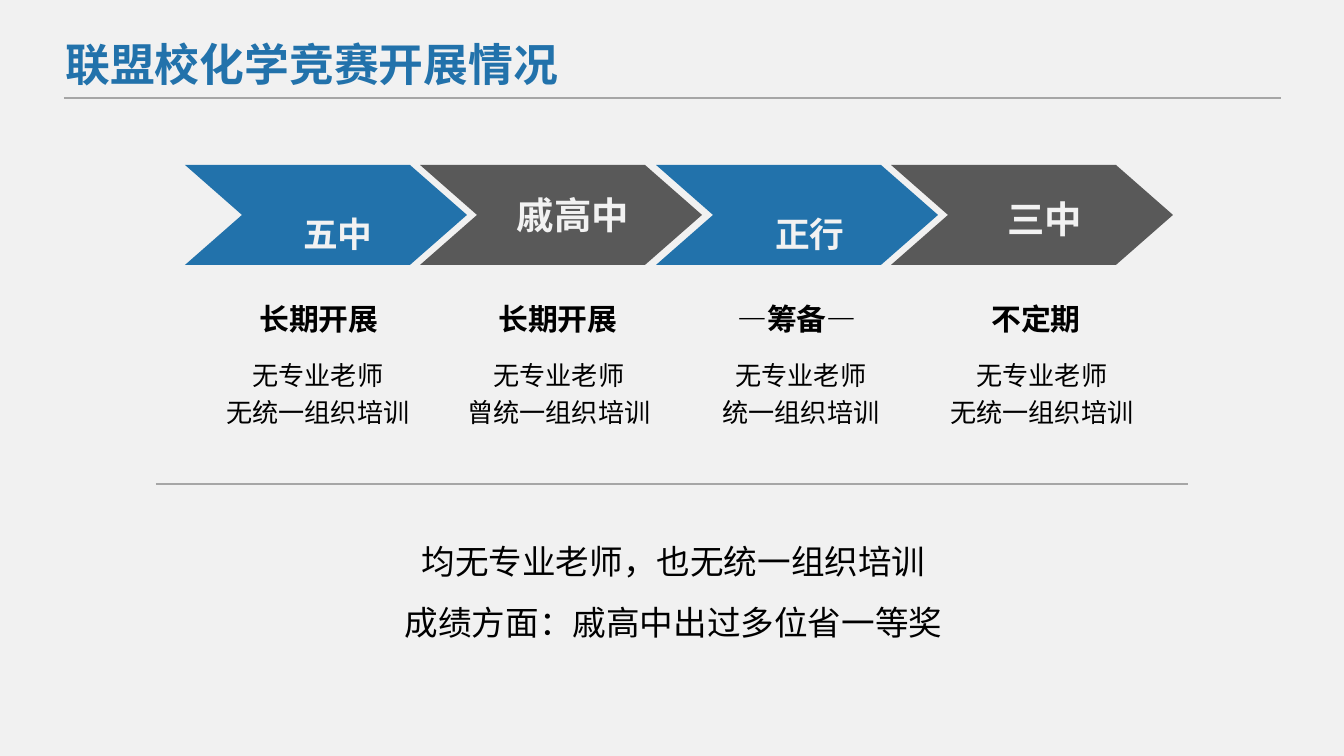
from pptx import Presentation, util as u
from pptx.dml.color import RGBColor
from pptx.enum import shapes, text
from pptx.oxml import xmlchemy as xml

PX = 914400 / 134.4
FACE = "Noto Sans CJK SC"
BLUE, GREY, RULE, PALE = "2272AB", "595959", "A6A6A6", "F2F2F2"
rgb = RGBColor.from_string


def px(*vals):
    return [u.Emu(round(v * PX)) for v in vals]


def write(box, lines, size, color="000000", bold=False, align="CENTER",
          space=None, wrap=True, inset=None, anchor="TOP", base=None):
    frame = slide.shapes.add_textbox(*px(*box)).text_frame
    frame.word_wrap = wrap
    frame.auto_size = text.MSO_AUTO_SIZE.SHAPE_TO_FIT_TEXT
    frame.vertical_anchor = text.MSO_ANCHOR[anchor]
    if inset:
        frame.margin_left, frame.margin_top = px(*inset)
        frame.margin_right, frame.margin_bottom = px(*inset)
    for i, line in enumerate(lines):
        para = frame.add_paragraph() if i else frame.paragraphs[0]
        para.alignment = text.PP_ALIGN[align]
        para.line_spacing = space
        run = para.add_run()
        run.text = line
        font = run.font
        font.name, font.size, font.bold = FACE, u.Pt(size), bold
        font.color.rgb = rgb(color)
        props = run._r.get_or_add_rPr()
        east = xml.OxmlElement("a:ea")
        east.set("typeface", FACE)
        props.find(xml.qn("a:latin")).addnext(east)
        if base:
            props.set("baseline", str(base))


show = Presentation()
show.slide_width, show.slide_height = px(1344, 756)
slide = show.slides.add_slide(show.slide_layouts[6])
fill = slide.background.fill
fill.solid()
fill.fore_color.rgb = rgb("F1F1F1")

# Title and rules
write((52, 30, 520, 67), ["联盟校化学竞赛开展情况"], 24, BLUE, bold=True,
      align="LEFT", wrap=False)
for left, right, y, width in [(64, 1281, 98, 1), (156, 1188, 484, 0.75)]:
    rule = slide.shapes.add_connector(
        shapes.MSO_CONNECTOR.STRAIGHT, *px(left, y, right, y))
    rule.line.color.rgb = rgb(RULE)
    rule.line.width = u.Pt(width)
    rule._element.spPr.append(xml.OxmlElement("a:effectLst"))

# One column per school: chevron, name, status, details
big = dict(size=32, space=1.2, base=-3000)
schools = [
    ("五中", (215, 180, 246, 70), big, "长期开展", "无统一组织培训"),
    ("戚高中", (454, 185, 238, 59), dict(size=20), "长期开展", "曾统一组织培训"),
    ("正行", (692, 180, 235, 70), big, "—筹备—", "统一组织培训"),
    ("三中", (926, 181, 238, 67), dict(size=20, space=1.2), "不定期",
     "无统一组织培训"),
]
for i, (name, box, look, state, train) in enumerate(schools):
    arrow = slide.shapes.add_shape(
        shapes.MSO_SHAPE.CHEVRON, *px(185 + 471 * i // 2, 165, 282, 100))
    arrow.adjustments[0] = 0.57
    arrow.shadow.inherit = False
    arrow.fill.solid()
    arrow.fill.fore_color.rgb = rgb(GREY if i % 2 else BLUE)
    arrow.line.fill.background()
    write(box, [name], color=PALE, bold=True, anchor="MIDDLE", **look)
    wide = 110 if len(state) == 3 else 140
    write((319 + 239 * i - wide // 2, 296, wide, 46), [state], 16, bold=True,
          wrap=False, inset=(9, 5))
    write((214 + 483 * i // 2, 348, 208, 86), ["无专业老师", train], 14,
          space=1.2, inset=(9, 5))

# Summary
write((156, 516, 1035, 132),
      ["均无专业老师，也无统一组织培训", "成绩方面：戚高中出过多位省一等奖"],
      18, space=1.5, inset=(9, 5))

show.save("out.pptx")
